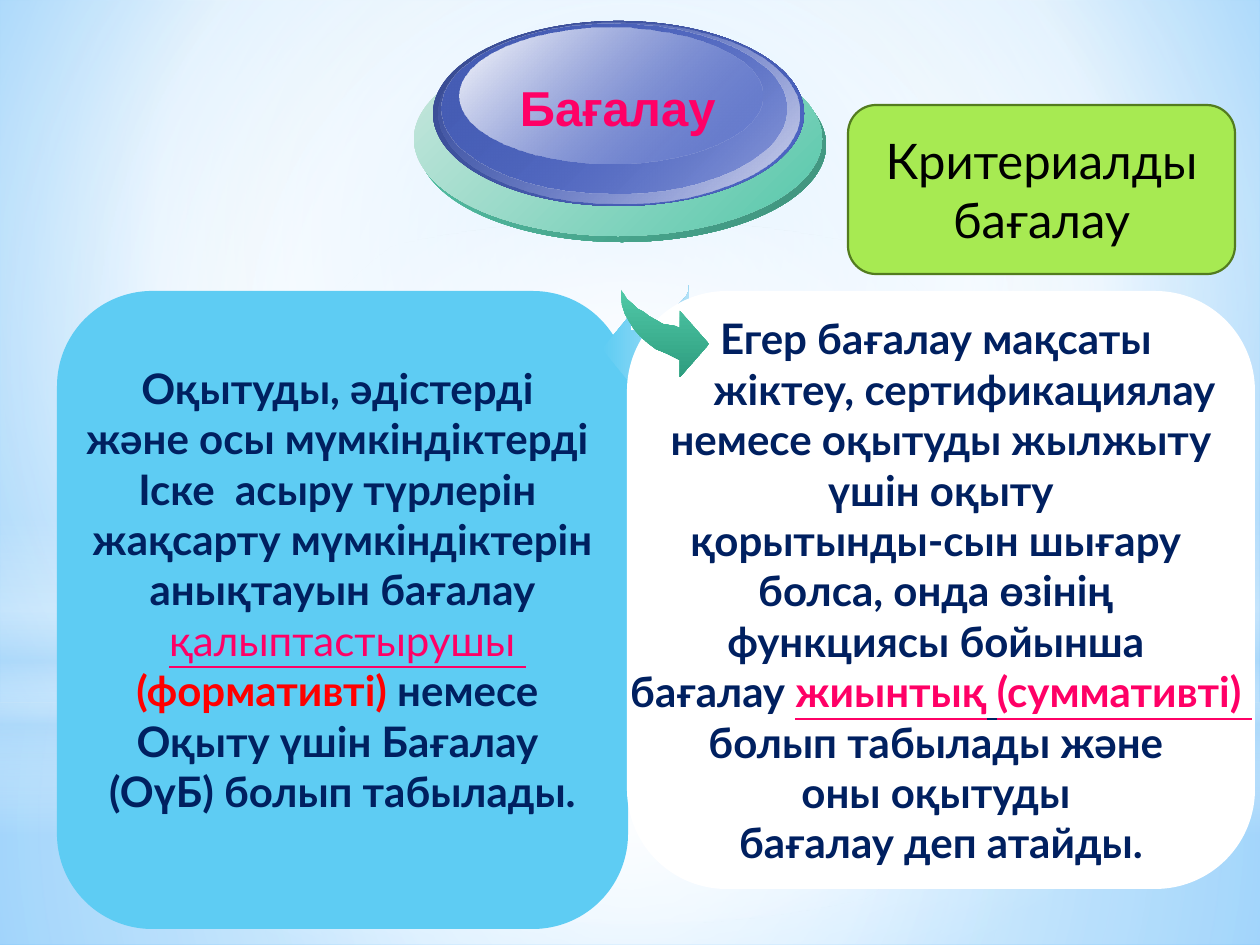
from lxml.etree import SubElement
from pptx import Presentation
from pptx.dml.color import RGBColor
from pptx.enum.shapes import MSO_SHAPE
from pptx.enum.text import MSO_ANCHOR, MSO_AUTO_SIZE, PP_ALIGN
from pptx.oxml.ns import qn
from pptx.util import Pt

PX = 914400 / 126
COLORS = {
    "navy": "002060", "pink": "FF0066", "red": "FF0000", "black": "000000",
    "white": "FFFFFF", "sky": "5ECCF3", "pale sky": "B0E0F7", "haze": "B4DCFA",
    "backdrop": "9ED5FF", "backdrop edge": "5BB9FF",
    "lime": "A7EA52", "lime line": "537C1F",
    "green": "52CBA9", "deep green": "2E9D7F",
    "mint": "56C7AA", "dark mint": "3F917C", "pale mint": "CBE8DF",
    "indigo": "4E67C8", "dark indigo": "384A8F", "mid indigo": "465DB5",
    "pale indigo": "D7DAEE",
}


def gradient(fill, stops, angle=None, focus=(50, 50, 50, 50)):
    """Fill with (position %, colour, opacity %) stops; circular if no angle is given."""
    fill.gradient()
    grad = fill._xPr.find(qn("a:gradFill"))
    for child in list(grad):
        grad.remove(child)
    stop_list = SubElement(grad, qn("a:gsLst"))
    for position, color, opacity in stops:
        stop = SubElement(stop_list, qn("a:gs"), pos=str(position * 1000))
        rgb = SubElement(stop, qn("a:srgbClr"), val=COLORS[color])
        if opacity < 100:
            SubElement(rgb, qn("a:alpha"), val=str(opacity * 1000))
    if angle is None:
        circle = SubElement(grad, qn("a:path"), path="circle")
        sides = {side: str(inset * 1000) for side, inset in zip("ltrb", focus)}
        SubElement(circle, qn("a:fillToRect"), **sides)
    else:
        SubElement(grad, qn("a:lin"), ang=str(angle * 60000), scaled="0")


def add_plain(preset, box):
    """Add a preset shape at a px box, without shadow or outline."""
    shape = slide.shapes.add_shape(preset, *(int(v * PX) for v in box))
    shape.shadow.inherit = False
    shape.line.fill.background()
    return shape


prs = Presentation()
prs.slide_width, prs.slide_height = int(1260 * PX), int(945 * PX)
slide = prs.slides.add_slide(prs.slide_layouts[5])

# Backdrop
gradient(slide.background.fill,
         [(0, "backdrop", 100), (60, "white", 100), (100, "backdrop edge", 100)],
         focus=(20, 10, 20, 60))
glows = [
    (MSO_SHAPE.RECTANGLE, (0, 703, 1260, 242), None,
     [(0, "white", 91), (37, "white", 76), (100, "haze", 79)]),
    (MSO_SHAPE.RECTANGLE, (0, 0, 1260, 703), None,
     [(0, "white", 89), (48, "white", 62), (100, "haze", 79)]),
    (MSO_SHAPE.RECTANGLE, (0, 519, 1260, 315), 90,
     [(0, "white", 0), (29, "white", 30), (45, "haze", 40),
      (55, "white", 26), (65, "haze", 60), (100, "white", 0)]),
    (MSO_SHAPE.OVAL, (0, 221, 1260, 703), None,
     [(0, "white", 100), (56, "white", 0)]),
]
for preset, box, angle, stops in glows:
    gradient(add_plain(preset, box).fill, stops, angle)

# Two panels, each with its curved arrow. Segment: text, colour, bold, underline
formative = [
    "Оқытуды, әдістерді ",
    "және осы мүмкіндіктерді ",
    "Іске  асыру түрлерін ",
    "жақсарту мүмкіндіктерін",
    "анықтауын бағалау",
    [(" ", "navy", True, False), ("қалыптастырушы ", "pink", False, True)],
    [("(формативті) ", "red", True, False), ("немесе ", "navy", True, False)],
    "Оқыту үшін Бағалау ",
    "(ОүБ) болып табылады.",
]
summative = [
    "Егер бағалау мақсаты ",
    "жіктеу, сертификациялау ",
    "немесе оқытуды жылжыту",
    " үшін оқыту ",
    "қорытынды-сын шығару ",
    "болса, онда өзінің ",
    "функциясы бойынша ",
    [("бағалау ", "navy", True, False), ("жиынтық", "pink", True, True),
     (" ", "navy", True, True), ("(суммативті) ", "pink", True, True)],
    "болып табылады және ",
    "оны оқытуды ",
    "бағалау деп атайды.",
]
left_arrow = [
    (689, 285), (689, 296), (688, 306), (685, 316), (682, 325), (677, 334),
    (670, 341), (663, 348), (654, 355), (643, 362), (631, 367), (631, 384),
    (602, 349), (631, 314), (631, 331), (636, 331), (643, 329), (649, 326),
    (655, 324), (662, 320), (668, 315), (673, 311), (678, 305), (683, 300),
    (687, 295), (689, 290)]
right_arrow = [
    (621, 285), (621, 295), (622, 305), (625, 314), (629, 321), (634, 329),
    (640, 336), (648, 343), (656, 349), (668, 354), (680, 360), (680, 377),
    (709, 344), (680, 311), (680, 328), (675, 326), (669, 325), (663, 324),
    (656, 320), (649, 316), (644, 312), (638, 309), (633, 304), (627, 299),
    (624, 294), (621, 290)]
panels = [
    ((57, 291, 571, 638), "sky", formative, 48, left_arrow, ("sky", "pale sky"), 0),
    ((627, 291, 628, 598), "white", summative, 6, right_arrow, ("green", "deep green"), 90),
]
for box, color, lines, bottom_inset, outline, arrow_colors, angle in panels:
    panel = add_plain(MSO_SHAPE.ROUNDED_RECTANGLE, box)
    panel.fill.solid()
    panel.fill.fore_color.rgb = RGBColor.from_string(COLORS[color])
    frame = panel.text_frame
    frame.word_wrap = False
    frame.vertical_anchor = MSO_ANCHOR.MIDDLE
    frame.margin_bottom = int(bottom_inset * PX)
    for number, line in enumerate(lines):
        paragraph = frame.add_paragraph() if number else frame.paragraphs[0]
        paragraph.alignment = PP_ALIGN.CENTER
        if line.startswith("жіктеу") if isinstance(line, str) else False:
            paragraph._p.get_or_add_pPr().set("marL", str(int(57 * PX)))
        segments = [(line, "navy", True, False)] if isinstance(line, str) else line
        for text, text_color, bold, underline in segments:
            run = paragraph.add_run()
            run.text = text
            run.font.name, run.font.size = "Lato", Pt(24)
            run.font.bold, run.font.underline = bold, underline
            run.font.color.rgb = RGBColor.from_string(COLORS[text_color])

    builder = slide.shapes.build_freeform(*outline[0], scale=PX)
    builder.add_line_segments(outline[1:], close=True)
    arrow = builder.convert_to_shape()
    arrow.shadow.inherit = False
    arrow.line.fill.background()
    start, end = arrow_colors
    gradient(arrow.fill, [(0, start, 100), (100, end, 100)], angle)

# Layered button that carries the title
button_layers = [
    ((418, 48, 408, 194), ("mint", 100), ("dark mint", 100)),
    ((414, 42, 408, 194), ("pale mint", 100), ("mint", 100)),
    ((433, 21, 371, 185), ("dark indigo", 100), ("indigo", 100)),
    ((438, 23, 361, 180), ("indigo", 0), ("pale indigo", 100)),
    ((442, 24, 344, 169), ("mid indigo", 100), ("indigo", 48)),
    ((460, 28, 303, 136), ("white", 100), ("indigo", 38)),
]
for box, start, end in button_layers:
    gradient(add_plain(MSO_SHAPE.OVAL, box).fill, [(0, *start), (100, *end)], 45)

title = slide.shapes.title
slide.shapes._spTree.append(title._element)  # bring in front of the button
title.left, title.top, title.width, title.height = (int(v * PX) for v in (498, 71, 230, 72))
title.text_frame.text = "Бағалау"
title.text_frame.auto_size = MSO_AUTO_SIZE.NONE
title.text_frame.vertical_anchor = MSO_ANCHOR.TOP
title.text_frame.paragraphs[0].alignment = PP_ALIGN.RIGHT
title_font = title.text_frame.paragraphs[0].runs[0].font
title_font.name, title_font.size, title_font.bold = "Arial", Pt(28), True
title_font.color.rgb = RGBColor.from_string(COLORS["pink"])

# Criteria label
criteria = add_plain(MSO_SHAPE.ROUNDED_RECTANGLE, (848, 105, 387, 169))
criteria.fill.solid()
criteria.fill.fore_color.rgb = RGBColor.from_string(COLORS["lime"])
criteria.line.color.rgb = RGBColor.from_string(COLORS["lime line"])
criteria.line.width = Pt(1.25)
criteria.text_frame.text = "Критериалды бағалау"
criteria.text_frame.word_wrap = True
criteria.text_frame.vertical_anchor = MSO_ANCHOR.MIDDLE
criteria.text_frame.paragraphs[0].alignment = PP_ALIGN.CENTER
criteria_font = criteria.text_frame.paragraphs[0].runs[0].font
criteria_font.name, criteria_font.size = "Lato", Pt(28)
criteria_font.color.rgb = RGBColor.from_string(COLORS["black"])

prs.save("out.pptx")
